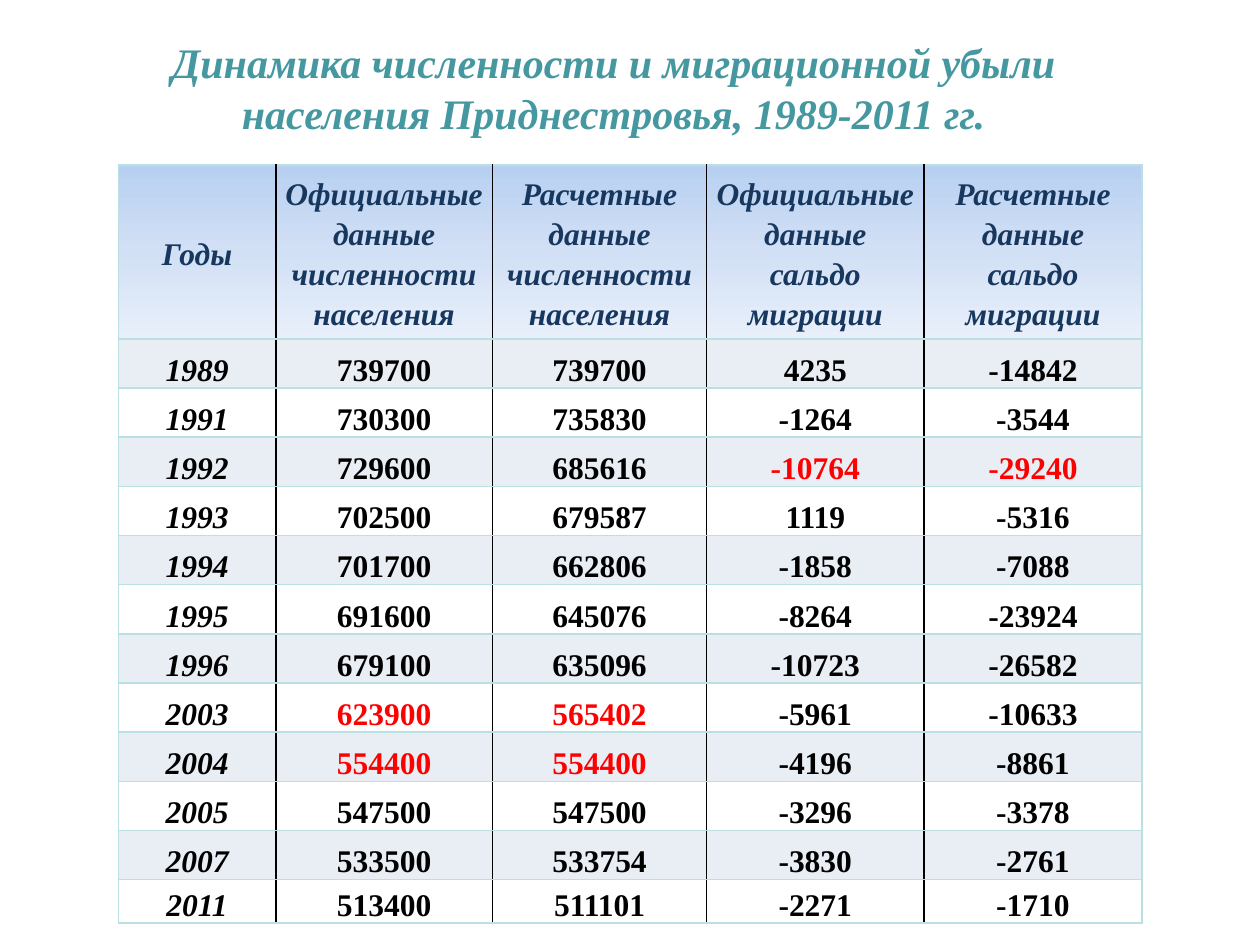
from dataclasses import dataclass

from lxml import etree
from pptx import Presentation
from pptx.dml.color import RGBColor
from pptx.enum.text import MSO_ANCHOR, PP_ALIGN
from pptx.oxml.ns import qn
from pptx.util import Pt

CENTER = PP_ALIGN.CENTER
MIDDLE = MSO_ANCHOR.MIDDLE
BOTTOM = MSO_ANCHOR.BOTTOM


@dataclass(frozen=True)
class Theme:
    font: str = "Times New Roman"
    title: str = "4597A0"
    edge: str = "224B50"
    head: str = "17375E"
    ink: str = "000000"
    hot: str = "FF0000"
    band: str = "E9EDF4"
    plain: str = "FFFFFF"
    rule: str = "BBE0E3"
    fade: tuple[str, ...] = ("B7D0F1", "D2E0F5", "E8EFFA")
    big: float = 24
    body: float = 18


@dataclass(frozen=True)
class Year:
    name: str
    data: tuple[int, ...]
    hot: tuple[int, ...] = ()


@dataclass(frozen=True)
class Look:
    color: str
    anchor: MSO_ANCHOR
    italic: bool = False
    tight: bool = False


THEME = Theme()
TITLE = "Динамика численности и миграционной убыли населения Приднестровья, 1989-2011 гг."
HEADS = (
    ("Годы",),
    ("Официальные данные численности населения",),
    ("Расчетные", "данные численности населения"),
    ("Официальные данные сальдо миграции",),
    ("Расчетные данные сальдо миграции",),
)
YEARS = (
    Year("1989", (739700, 739700, 4235, -14842)),
    Year("1991", (730300, 735830, -1264, -3544)),
    Year("1992", (729600, 685616, -10764, -29240), (3, 4)),
    Year("1993", (702500, 679587, 1119, -5316)),
    Year("1994", (701700, 662806, -1858, -7088)),
    Year("1995", (691600, 645076, -8264, -23924)),
    Year("1996", (679100, 635096, -10723, -26582)),
    Year("2003", (623900, 565402, -5961, -10633), (1, 2)),
    Year("2004", (554400, 554400, -4196, -8861), (1, 2)),
    Year("2005", (547500, 547500, -3296, -3378)),
    Year("2007", (533500, 533754, -3830, -2761)),
    Year("2011", (513400, 511101, -2271, -1710)),
)
WIDTHS = (90, 123.8, 122.4, 124.2, 124.6)
HEIGHTS = (95.8, *[28.1] * (len(YEARS) - 1), 24)
LEFT, TOP = 67.6, 94.3


def add_fill(node, color: str) -> None:
    fill = etree.SubElement(node, qn("a:solidFill"))
    etree.SubElement(fill, qn("a:srgbClr"), val=color)


def make_line(tag: str, color: str, width: float):
    line = etree.Element(qn(tag), w=str(Pt(width)))
    add_fill(line, color)
    return line


def add_run(para, text: str, size: float, color: str, italic: bool):
    run = para.add_run()
    run.text = text
    font = run.font
    font.name, font.size = THEME.font, Pt(size)
    font.bold, font.italic = True, italic
    font.color.rgb = RGBColor.from_string(color)
    return run


def add_title(slide) -> None:
    box = slide.shapes.add_textbox(Pt(44.6), Pt(16.6), Pt(612), Pt(66.2))
    frame = box.text_frame
    frame.word_wrap = True
    frame.vertical_anchor = MIDDLE
    para = frame.paragraphs[0]
    para.alignment = CENTER
    run = add_run(para, TITLE, THEME.big, THEME.title, True)
    run.font._element.insert(0, make_line("a:ln", THEME.edge, 0.75))


def set_rules(cell, first: bool, last: bool) -> None:
    colors = {
        "a:lnL": THEME.rule if first else THEME.ink,
        "a:lnR": THEME.rule if last else THEME.ink,
        "a:lnT": THEME.rule,
        "a:lnB": THEME.rule,
    }
    props = cell._tc.get_or_add_tcPr()
    for spot, (tag, color) in enumerate(colors.items()):
        props.insert(spot, make_line(tag, color, 1))


def set_fade(cell) -> None:
    grad = etree.SubElement(cell._tc.get_or_add_tcPr(), qn("a:gradFill"))
    stops = etree.SubElement(grad, qn("a:gsLst"))
    for step, color in enumerate(THEME.fade):
        stop = etree.SubElement(stops, qn("a:gs"), pos=str(step * 50000))
        etree.SubElement(stop, qn("a:srgbClr"), val=color)
    etree.SubElement(grad, qn("a:lin"), ang="5400000", scaled="0")


def set_text(cell, lines: tuple[str, ...], look: Look) -> None:
    cell.vertical_anchor = look.anchor
    side = Pt(0.7 if look.tight else 5)
    cell.margin_left = cell.margin_right = side
    cell.margin_top = Pt(0.7 if look.tight else 0)
    cell.margin_bottom = Pt(0)
    frame = cell.text_frame
    for spot, text in enumerate(lines):
        para = frame.add_paragraph() if spot else frame.paragraphs[0]
        para.alignment = CENTER
        para.line_spacing = 1.0 if look.tight else 1.15
        add_run(para, text, THEME.body, look.color, look.italic)


def add_grid(slide) -> None:
    frame = slide.shapes.add_table(
        len(HEIGHTS), len(WIDTHS), Pt(LEFT), Pt(TOP), Pt(sum(WIDTHS)), Pt(sum(HEIGHTS))
    )
    table = frame.table
    table.horz_banding = False
    table.first_row = False
    for col, width in zip(table.columns, WIDTHS):
        col.width = Pt(width)
    for row, height in zip(table.rows, HEIGHTS):
        row.height = Pt(height)

    end = len(WIDTHS) - 1
    for col, lines in enumerate(HEADS):
        cell = table.cell(0, col)
        set_text(cell, lines, Look(THEME.head, MIDDLE, italic=True))
        set_fade(cell)
        set_rules(cell, col == 0, col == end)

    for row, year in enumerate(YEARS, 1):
        shade = THEME.band if row % 2 else THEME.plain
        for col, value in enumerate((year.name, *year.data)):
            cell = table.cell(row, col)
            look = Look(
                THEME.hot if col in year.hot else THEME.ink,
                BOTTOM,
                italic=col == 0,
                tight=col == end and 1 < row < len(YEARS),
            )
            set_text(cell, (str(value),), look)
            cell.fill.solid()
            cell.fill.fore_color.rgb = RGBColor.from_string(shade)
            set_rules(cell, col == 0, col == end)


def main() -> None:
    deck = Presentation()
    deck.slide_width, deck.slide_height = Pt(720), Pt(540)
    slide = deck.slides.add_slide(deck.slide_layouts[6])
    add_title(slide)
    add_grid(slide)
    deck.save("out.pptx")


if __name__ == "__main__":
    main()
